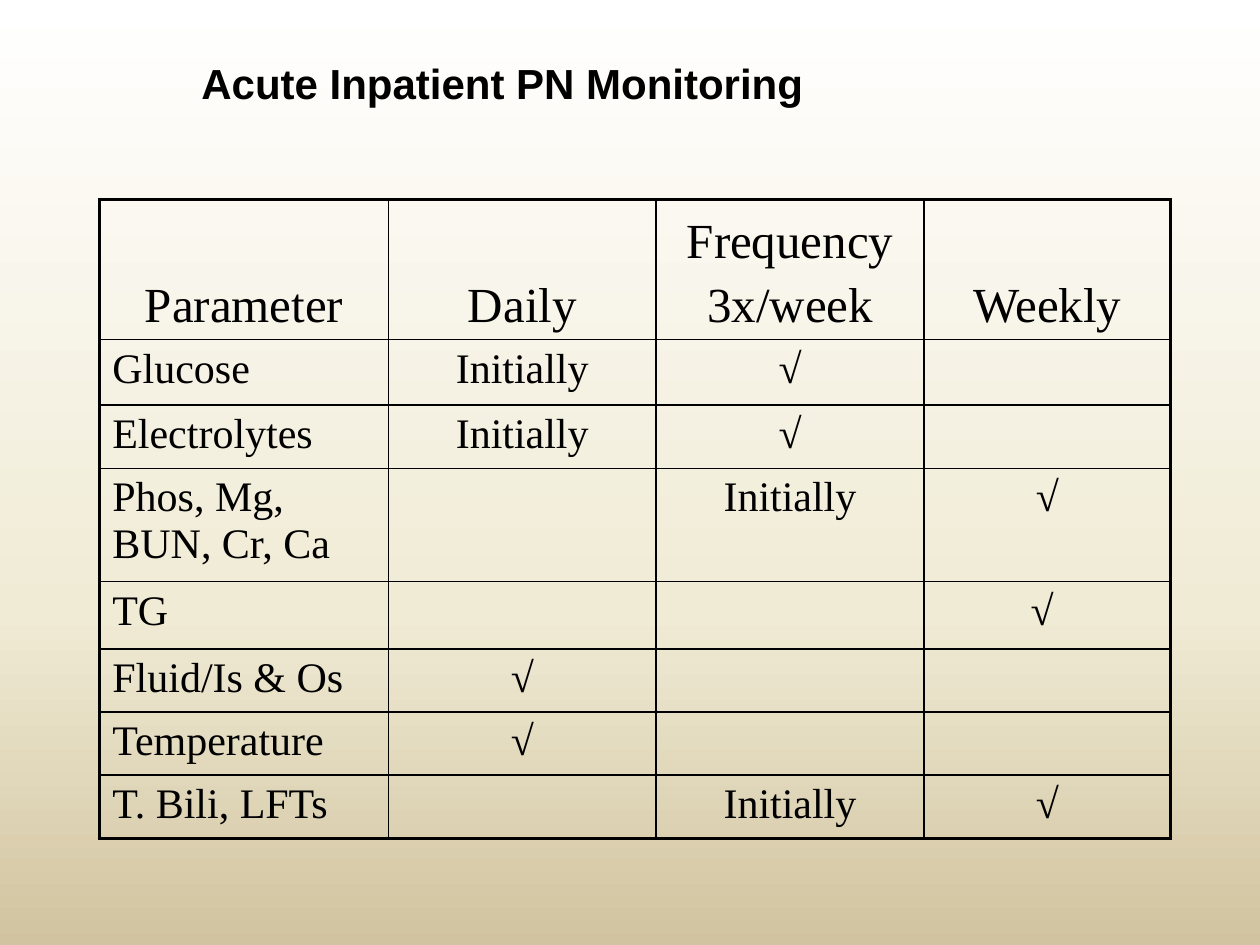
from copy import deepcopy
from dataclasses import dataclass

from lxml.etree import SubElement
from pptx import Presentation
from pptx.dml.color import RGBColor
from pptx.enum.text import MSO_ANCHOR, PP_ALIGN
from pptx.oxml.ns import qn
from pptx.util import Pt


@dataclass(frozen=True)
class Theme:
    ink: str = "000000"
    gradient: tuple = ((0, "FFFFFF"), (0.65, "F0EBD5"), (1, "D1C39F"))
    title_font: str = "Arial"
    table_font: str = "Times New Roman"
    title_size: float = 24
    header_size: float = 28
    body_size: float = 24
    outer_line: float = 2.25
    inner_line: float = 1


class SlideBuilder:
    def __init__(self, prs, theme):
        self.theme = theme
        self.s = prs.slides.add_slide(prs.slide_layouts[6])

    def background(self):
        fill = self.s.background.fill
        fill.gradient()
        fill.gradient_angle = 270
        stops = self.s.element.find(".//" + qn("a:gsLst"))
        stops.append(deepcopy(stops[-1]))
        for stop, (position, color) in zip(fill.gradient_stops, self.theme.gradient):
            stop.position = position
            stop.color.rgb = RGBColor.from_string(color)

    def run(self, p, text, font, size, bold=False):
        r = p.add_run()
        r.text = text
        r.font.name, r.font.size, r.font.bold = font, Pt(size), bold
        r.font.color.rgb = RGBColor.from_string(self.theme.ink)

    def title(self, text, left, top, width, height):
        sp = self.s.shapes.add_textbox(Pt(left), Pt(top), Pt(width), Pt(height))
        tf = sp.text_frame
        tf.word_wrap = True
        tf.vertical_anchor = MSO_ANCHOR.MIDDLE
        self.run(tf.paragraphs[0], text, self.theme.title_font,
                 self.theme.title_size, bold=True)

    def borders(self, cell, outer):
        """Draw all four sides; those named in outer get the heavy line."""
        tc_pr = cell._tc.get_or_add_tcPr()
        for i, side in enumerate("LRTB"):
            width = self.theme.outer_line if side in outer else self.theme.inner_line
            ln = SubElement(tc_pr, qn("a:ln" + side), w=str(Pt(width)))
            fill = SubElement(ln, qn("a:solidFill"))
            SubElement(fill, qn("a:srgbClr"), val=self.theme.ink)
            tc_pr.insert(i, ln)

    def cell_text(self, cell, text, size, align):
        for i, line in enumerate(text.split("\n")):
            tf = cell.text_frame
            p = tf.add_paragraph() if i else tf.paragraphs[0]
            p.alignment = align
            if i:
                p.space_before = Pt(0.2 * size)
            self.run(p, line, self.theme.table_font, size)

    def table(self, rows, left, top, widths, heights):
        table = self.s.shapes.add_table(
            len(rows), len(widths), Pt(left), Pt(top),
            Pt(sum(widths)), Pt(sum(heights))).table
        table.first_row = table.horz_banding = False
        for column, width in zip(table.columns, widths):
            column.width = Pt(width)
        last_row, last_col = len(rows) - 1, len(widths) - 1
        for i, (values, height) in enumerate(zip(rows, heights)):
            table.rows[i].height = Pt(height)
            for j, text in enumerate(values):
                cell = table.cell(i, j)
                cell.fill.background()
                edges = {"L": j == 0, "R": j == last_col,
                         "T": i == 0, "B": i == last_row}
                self.borders(cell, [side for side, on in edges.items() if on])
                if i == 0:
                    cell.vertical_anchor = MSO_ANCHOR.BOTTOM
                if text:
                    size = self.theme.body_size if i else self.theme.header_size
                    align = PP_ALIGN.LEFT if i and j == 0 else PP_ALIGN.CENTER
                    self.cell_text(cell, text, size, align)


MONITORING = [
    ("Parameter", "Daily", "Frequency\n3x/week", "Weekly"),
    ("Glucose", "Initially", "√", ""),
    ("Electrolytes", "Initially", "√", ""),
    ("Phos, Mg, BUN, Cr, Ca", "", "Initially", "√"),
    ("TG", "", "", "√ "),
    ("Fluid/Is & Os", "√", "", ""),
    ("Temperature", "√", "", ""),
    ("T. Bili, LFTs", "", "Initially", "√"),
]


def main():
    prs = Presentation()
    prs.slide_width, prs.slide_height = Pt(720), Pt(540)
    slide = SlideBuilder(prs, Theme())
    slide.background()
    slide.title("Acute Inpatient PN Monitoring", 108, 0, 612, 95)
    slide.table(MONITORING, 57, 114, widths=(165, 153, 153, 141),
                heights=(75, 37.5, 36, 60, 38.5, 34, 36, 34))
    prs.save("out.pptx")


if __name__ == "__main__":
    main()
